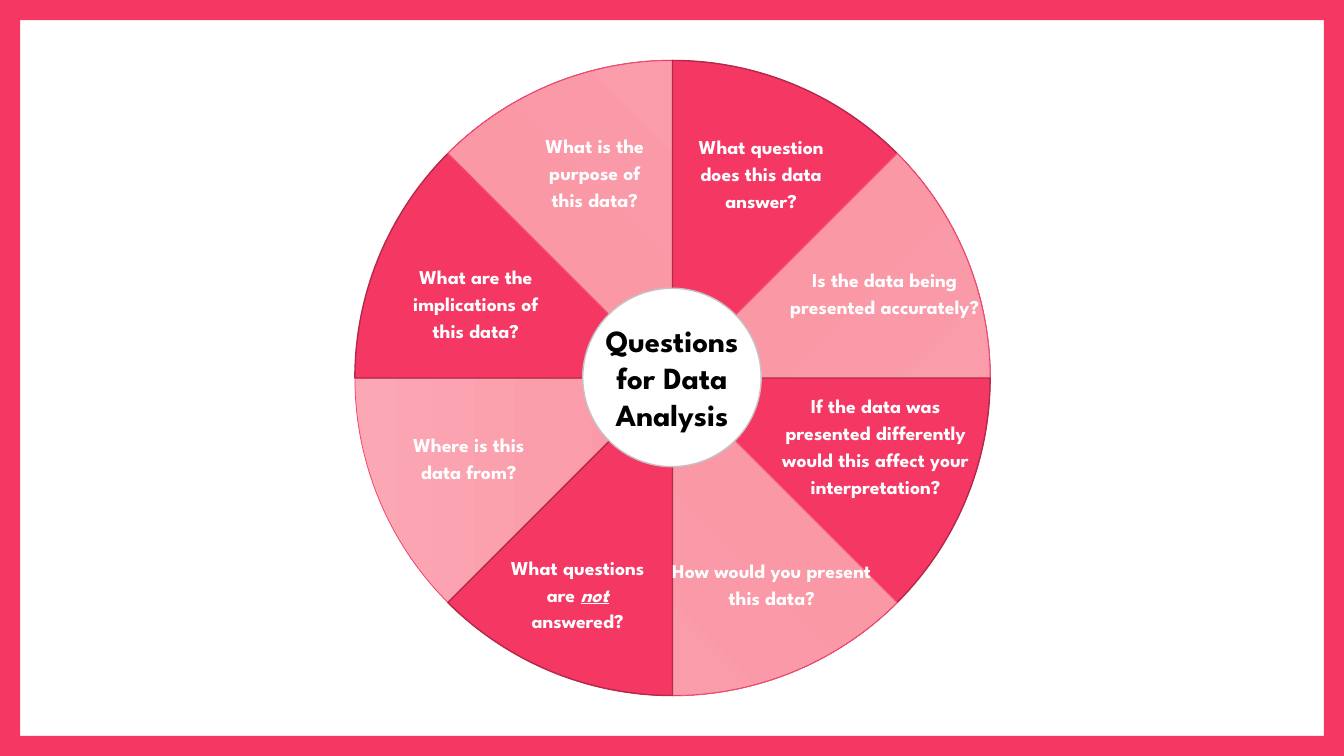
from copy import deepcopy
from dataclasses import dataclass

from pptx import Presentation
from pptx.dml.color import RGBColor
from pptx.enum.shapes import MSO_SHAPE
from pptx.enum.text import MSO_AUTO_SIZE, PP_ALIGN
from pptx.oxml.ns import qn
from pptx.shapes.autoshape import Shape
from pptx.slide import Slide
from pptx.util import Inches, Pt

RECTANGLE, PIE, OVAL = MSO_SHAPE.RECTANGLE, MSO_SHAPE.PIE, MSO_SHAPE.OVAL
CENTER = PP_ALIGN.CENTER
FIT_TEXT = MSO_AUTO_SIZE.SHAPE_TO_FIT_TEXT


@dataclass(frozen=True)
class Theme:
    font: str = "League Spartan"
    pink: str = "F53764"
    dark_pink: str = "B5294A"
    white: str = "FFFFFF"
    black: str = "000000"
    grey: str = "C5C3C3"
    fade: tuple[str, ...] = ("FCA7B4", "FA98A6", "FE8497")
    title_size: float = 22
    label_size: float = 14
    label_spacing: float = 1.14


@dataclass(frozen=True)
class Box:
    left: float
    top: float
    width: float
    height: float


@dataclass(frozen=True)
class Label:
    box: Box
    text: str
    emphasis: str = ""
    ending: str = ""


THEME = Theme()
SLIDE_WIDTH, SLIDE_HEIGHT = 13.33, 7.5
BORDER, BORDER_INSET = 0.2, 0.07
WHEEL = Box(3.52, 0.6, 6.3, 6.3)
HUB = Box(5.78, 2.86, 1.77, 1.77)
TITLE = Label(Box(5.78, 3.14, 1.77, 1.21), "Questions for Data Analysis")
PIE_UNITS_PER_DEGREE = 0.6  # pie adjustments count 60000ths of a degree

LABELS = [
    Label(Box(5.21, 1.25, 1.38, 0.88), "What is the purpose of this data?"),
    Label(Box(6.74, 1.26, 1.62, 0.88), "What question does this data answer?"),
    Label(Box(7.73, 2.58, 2.09, 0.88), "Is the data being presented accurately?"),
    Label(Box(7.55, 3.83, 2.27, 1.15),
          "If the data was presented differently would this affect your interpretation?"),
    Label(Box(6.52, 5.46, 2.27, 0.61), "How would you present this data?"),
    Label(Box(3.9, 2.55, 1.64, 0.88), "What are the implications of this data?"),
    Label(Box(3.83, 4.21, 1.64, 0.61), "Where is this data from?"),
    Label(Box(4.91, 5.43, 1.64, 0.88), "What questions are ", "not", " answered?"),
]


def color(value: str) -> RGBColor:
    return RGBColor.from_string(value)


def lengths(box: Box) -> list[Inches]:
    return [Inches(value) for value in (box.left, box.top, box.width, box.height)]


def add_shape(slide: Slide, kind: MSO_SHAPE, box: Box, fill: str,
              line: str = "", line_width: float = 1) -> Shape:
    shape = slide.shapes.add_shape(kind, *lengths(box))
    shape.shadow.inherit = False
    shape.fill.solid()
    shape.fill.fore_color.rgb = color(fill)
    if line:
        shape.line.color.rgb = color(line)
        shape.line.width = Pt(line_width)
    else:
        shape.line.fill.background()
    return shape


def apply_fade(shape: Shape) -> None:
    shape.fill.gradient()
    shape.fill.gradient_angle = 270
    stop_list = next(shape._element.spPr.iter(qn("a:gsLst")))
    stop_list.insert(1, deepcopy(stop_list[0]))
    for stop, value, position in zip(shape.fill.gradient_stops, THEME.fade, (0, 0.5, 1)):
        stop.color.rgb = color(value)
        stop.position = position


def add_slice(slide: Slide, rotation: int, sweep: int, light: bool) -> None:
    line, width = (THEME.pink, 0.5) if light else (THEME.dark_pink, 1)
    shape = add_shape(slide, PIE, WHEEL, THEME.pink, line, width)
    shape.adjustments[0] = 180 * PIE_UNITS_PER_DEGREE
    shape.adjustments[1] = (180 + sweep) * PIE_UNITS_PER_DEGREE
    shape.rotation = rotation
    if light:
        apply_fade(shape)


def add_label(slide: Slide, label: Label, size: float, text_color: str,
              spacing: float = 1) -> None:
    frame = slide.shapes.add_textbox(*lengths(label.box)).text_frame
    frame.word_wrap = True
    frame.auto_size = FIT_TEXT
    paragraph = frame.paragraphs[0]
    paragraph.alignment = CENTER
    paragraph.line_spacing = spacing
    font = paragraph.font
    font.name, font.size, font.bold = THEME.font, Pt(size), True
    font.color.rgb = color(text_color)
    paragraph.add_run().text = label.text
    if label.emphasis:
        run = paragraph.add_run()
        run.text = label.emphasis
        run.font.italic = run.font.underline = True
        paragraph.add_run().text = label.ending


def main() -> None:
    presentation = Presentation()
    presentation.slide_width = Inches(SLIDE_WIDTH)
    presentation.slide_height = Inches(SLIDE_HEIGHT)
    slide = presentation.slides.add_slide(presentation.slide_layouts[6])

    # Border around the slide
    for left in (0, SLIDE_WIDTH - BORDER):
        add_shape(slide, RECTANGLE, Box(left, 0, BORDER, SLIDE_HEIGHT), THEME.pink)
    for top in (0, SLIDE_HEIGHT - BORDER):
        bar = Box(BORDER_INSET, top, SLIDE_WIDTH - 2 * BORDER_INSET, BORDER)
        add_shape(slide, RECTANGLE, bar, THEME.pink)

    # Wheel: overlapping quarters, 45 degrees apart, closed by one eighth
    for step in range(8):
        add_slice(slide, (270 + 45 * step + (45 if step else 0)) % 360 if step < 7 else 270,
                  sweep=45 if step == 7 else 90, light=step % 2 == 0)

    # Hub and its title
    add_shape(slide, OVAL, HUB, THEME.white, THEME.grey)
    add_label(slide, TITLE, THEME.title_size, THEME.black)

    # Questions on the slices
    for label in LABELS:
        add_label(slide, label, THEME.label_size, THEME.white, THEME.label_spacing)

    presentation.save("out.pptx")


if __name__ == "__main__":
    main()
